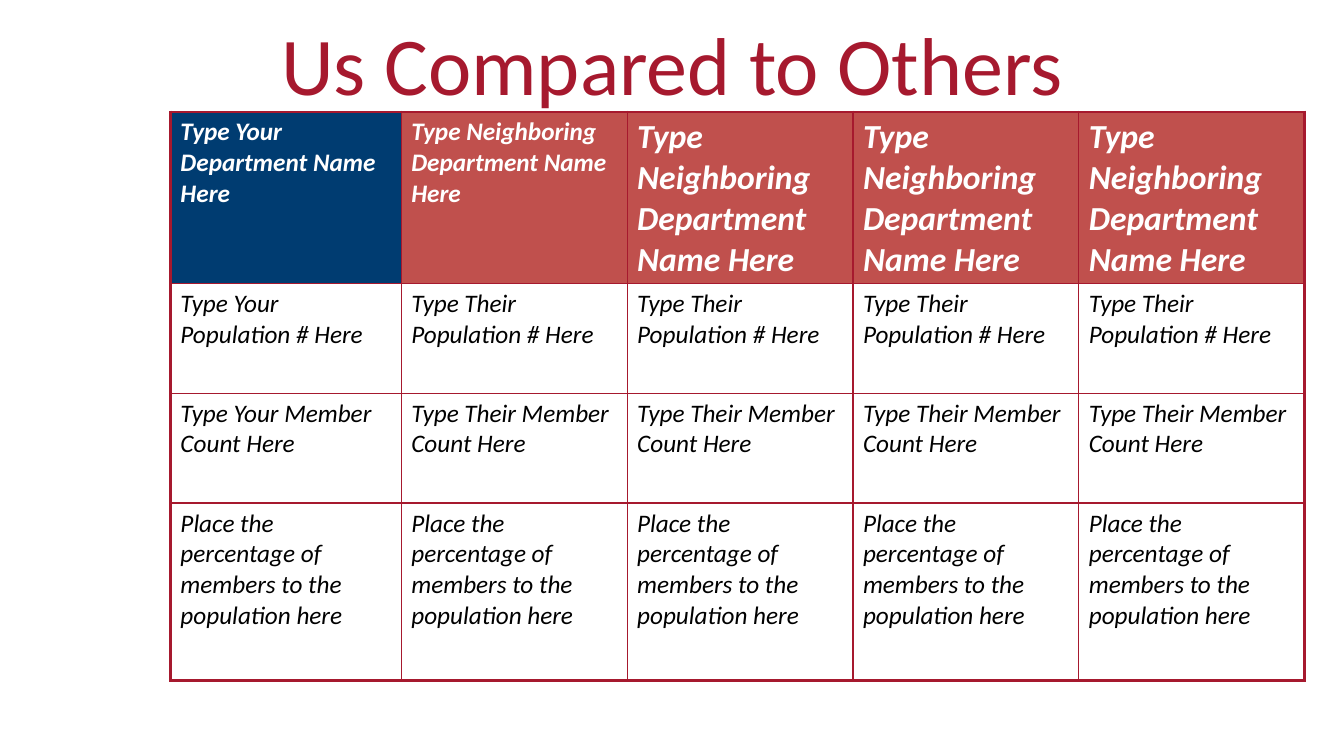
"""Build a slide that compares one department with its neighbors."""
from dataclasses import dataclass

from lxml.etree import SubElement
from pptx import Presentation
from pptx.dml.color import RGBColor
from pptx.enum.text import MSO_ANCHOR, PP_ALIGN
from pptx.oxml.ns import qn
from pptx.slide import Slide
from pptx.table import Table, _Cell
from pptx.text.text import TextFrame
from pptx.util import Inches, Pt

HUES = {"red": "A6192E", "blue": "003C71", "rose": "C0504D",
        "white": "FFFFFF", "black": "000000"}
FONT = "Calibri"
WIDE, HIGH = 13.33, 7.5
LEFT, TOP, TALL = 1.69, 1.11, 5.63
COLS = [2.29] + [2.24] * 4
THIN, THICK = 1, 2.25


@dataclass
class Band:
    height: float
    own: str
    other: str
    head: bool = False


HEAD = "Type {} Department Name Here"
SHARE = "Place the percentage of members to the population here"
BANDS = [
    Band(1.42, HEAD.format("Your"), HEAD.format("Neighboring"), True),
    Band(1.09, "Type Your Population # Here", "Type Their Population # Here"),
    Band(1.09, "Type Your Member Count Here", "Type Their Member Count Here"),
    Band(1.76, SHARE, SHARE),
]


def write(frame: TextFrame, text: str, *, size: float, hue: str,
          bold: bool = False, slant: bool = False,
          align: PP_ALIGN = PP_ALIGN.LEFT) -> None:
    frame.word_wrap = True
    para = frame.paragraphs[0]
    para.alignment = align
    run = para.add_run()
    run.text = text
    font = run.font
    font.name, font.size = FONT, Pt(size)
    font.bold, font.italic = bold, slant
    font.color.rgb = RGBColor.from_string(HUES[hue])


def edge(cell: _Cell, side: str, width: float) -> None:
    props = cell._tc.get_or_add_tcPr()
    line = SubElement(props, qn(f"a:ln{side}"), w=str(Pt(width)))
    fill = SubElement(line, qn("a:solidFill"))
    SubElement(fill, qn("a:srgbClr"), val=HUES["red"])


def draw_cell(table: Table, row: int, col: int) -> None:
    band, cell = BANDS[row], table.cell(row, col)
    outer = {"L": col == 0, "R": col == len(COLS) - 1,
             "T": row == 0, "B": row == len(BANDS) - 1}
    for side, thick in outer.items():
        edge(cell, side, THICK if thick else THIN)
    shade = "white"
    if band.head:
        shade = "rose" if col else "blue"
    cell.fill.solid()
    cell.fill.fore_color.rgb = RGBColor.from_string(HUES[shade])
    write(cell.text_frame, band.other if col else band.own,
          size=24 if band.head and col > 1 else 18,
          hue="white" if band.head else "black", bold=band.head, slant=True)


def draw_title(slide: Slide) -> None:
    box = slide.shapes.add_textbox(Inches(WIDE * 0.05), 0,
                                   Inches(WIDE * 0.9), Inches(HIGH / 6))
    box.text_frame.vertical_anchor = MSO_ANCHOR.MIDDLE
    write(box.text_frame, "Us Compared to Others", size=58.6, hue="red",
          align=PP_ALIGN.CENTER)


def draw_table(slide: Slide) -> None:
    frame = slide.shapes.add_table(
        len(BANDS), len(COLS), Inches(LEFT), Inches(TOP),
        Inches(sum(COLS)), Inches(TALL))
    table = frame.table
    table.first_row = table.horz_banding = False
    for col, width in enumerate(COLS):
        table.columns[col].width = Inches(width)
    for row, band in enumerate(BANDS):
        table.rows[row].height = Inches(band.height)
        for col in range(len(COLS)):
            draw_cell(table, row, col)
    frame.height = Inches(TALL)


def main() -> None:
    deck = Presentation()
    deck.slide_width, deck.slide_height = Inches(WIDE), Inches(HIGH)
    slide = deck.slides.add_slide(deck.slide_layouts[6])
    draw_title(slide)
    draw_table(slide)
    deck.save("out.pptx")


if __name__ == "__main__":
    main()
